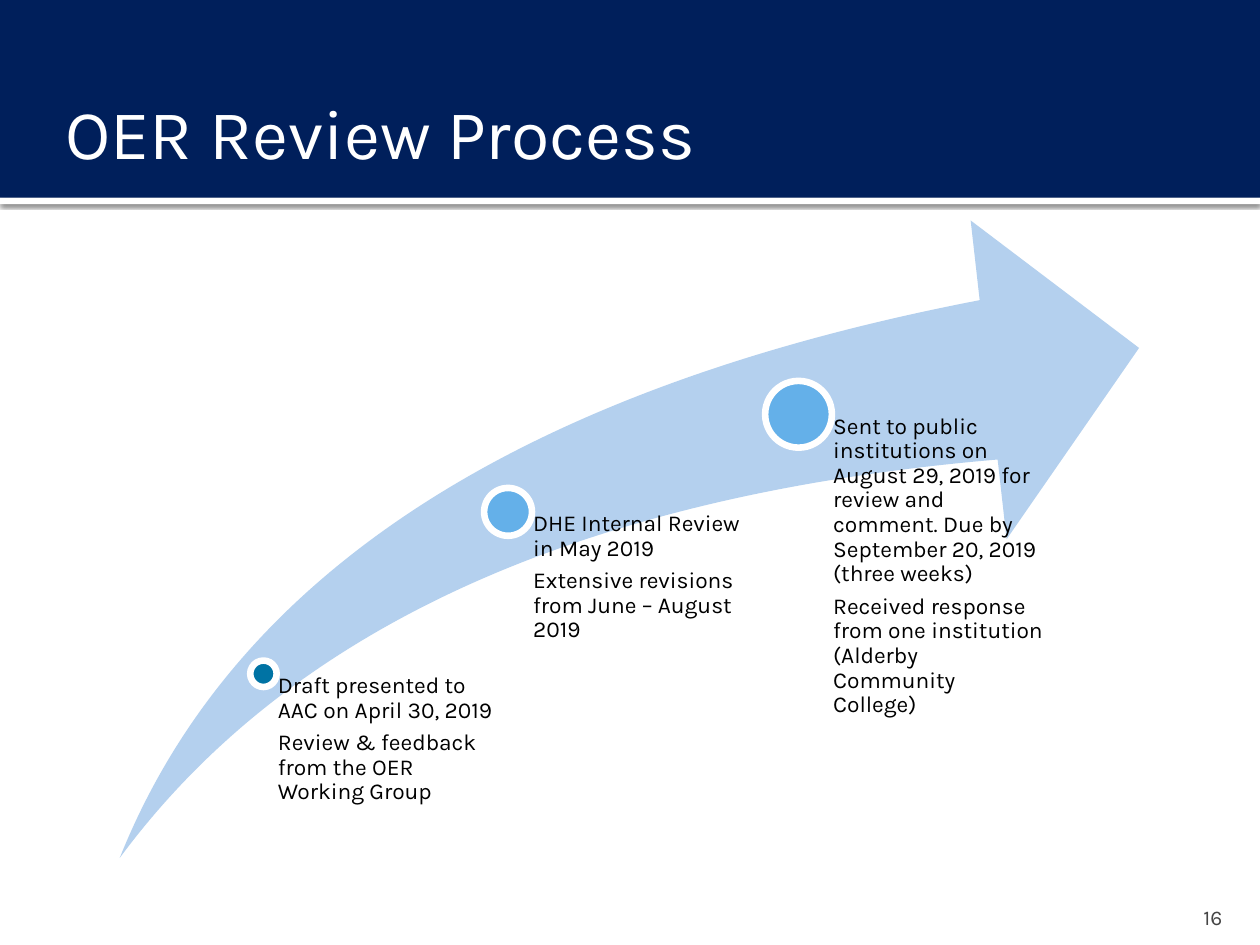
from lxml import etree
from pptx import Presentation
from pptx.dml.color import RGBColor
from pptx.enum.shapes import MSO_SHAPE
from pptx.enum.text import MSO_ANCHOR, MSO_AUTO_SIZE, PP_ALIGN
from pptx.oxml.ns import qn
from pptx.util import Inches, Pt

RECTANGLE, CIRCLE, SWOOSH = MSO_SHAPE.RECTANGLE, MSO_SHAPE.OVAL, MSO_SHAPE.SWOOSH_ARROW
TOP, MIDDLE, BOTTOM = MSO_ANCHOR.TOP, MSO_ANCHOR.MIDDLE, MSO_ANCHOR.BOTTOM
LEFT, RIGHT = PP_ALIGN.LEFT, PP_ALIGN.RIGHT
NO_AUTOFIT = MSO_AUTO_SIZE.NONE

WHITE = RGBColor(0xFF, 0xFF, 0xFF)
BLACK = RGBColor(0, 0, 0)
GRAY = RGBColor(0x45, 0x45, 0x45)
NAVY = RGBColor(0x00, 0x1F, 0x5B)
PALE_BLUE = RGBColor(0xB4, 0xD0, 0xEE)
TEAL = RGBColor(0x00, 0x73, 0xA4)
SKY = RGBColor(0x64, 0xB0, 0xE9)

FONT = "Karla"
SLIDE_W, SLIDE_H = 10, 7.5
HEADER_BOX = (0, 0, SLIDE_W, 1.57)
PROCESS_BOX = (0.95, 1.75, 8.09, 5.06)
NUMBER_BOX = (9, 7.08, 0.8, 0.3)

# Each milestone: centre as shares of the process box, diameter, text width, colour, notes
MILESTONES = [
    (0.141, 0.711, 0.21, 1.89, TEAL, [
        "Draft presented to AAC on April 30, 2019",
        "Review & feedback from the OER Working Group"]),
    (0.381, 0.457, 0.38, 1.94, SKY, [
        "DHE Internal Review in May 2019",
        "Extensive revisions from June – August 2019"]),
    (0.666, 0.304, 0.53, 1.94, SKY, [
        "Sent to public institutions on August 29, 2019 for review and comment. "
        "Due by September 20, 2019 (three weeks)",
        "Received response from one institution (Alderby Community College)"]),
]


def add_solid(shapes, kind, box, fill):
    """Add a filled preset shape with neither outline nor shadow."""
    solid = shapes.add_shape(kind, *map(Inches, box))
    solid.shadow.inherit = False
    solid.fill.solid()
    solid.fill.fore_color.rgb = fill
    solid.line.fill.background()
    return solid


def add_soft_shadow(shape):
    """Give a shape a small dark shadow just below it."""
    effects = shape.element.spPr.find(qn("a:effectLst"))
    shadow = etree.SubElement(effects, qn("a:outerShdw"), blurRad=str(Pt(2.5)),
                              dist=str(Pt(0.8)), dir="5400000", rotWithShape="0")
    color = etree.SubElement(shadow, qn("a:srgbClr"), val="000000")
    etree.SubElement(color, qn("a:alpha"), val="60000")


def write_text(frame, paragraphs, size, color, insets, anchor=TOP, align=LEFT):
    """Fill a text frame and format every paragraph alike."""
    frame.text = "\n".join(paragraphs)
    frame.word_wrap = True
    frame.auto_size = NO_AUTOFIT
    frame.vertical_anchor = anchor
    (frame.margin_left, frame.margin_top,
     frame.margin_right, frame.margin_bottom) = map(Inches, insets)
    for paragraph in frame.paragraphs:
        paragraph.alignment = align
        for run in paragraph.runs:
            run.font.name = FONT
            run.font.size = Pt(size)
            run.font.color.rgb = color


def add_header(slide, box, heading):
    """Draw the navy banner with its white rule and place the title on it."""
    left, top, width, height = box
    rule = add_solid(slide.shapes, RECTANGLE, (left, top + height, width, 0.05), WHITE)
    add_soft_shadow(rule)
    add_solid(slide.shapes, RECTANGLE, box, NAVY)
    title = slide.shapes.title
    title.left, title.top = Inches(left + 0.42), Inches(top + 0.58)
    title.width, title.height = Inches(width - 0.83), Inches(0.92)
    write_text(title.text_frame, [heading], 40, WHITE, (0.1, 0.05, 0.05, 0.05), MIDDLE)
    slide.shapes.element.append(title.element)


def add_milestone(shapes, center_x, center_y, diameter, width, bottom, color, notes):
    """Add a ringed dot with notes running down from its centre."""
    radius = diameter / 2
    dot = add_solid(shapes, CIRCLE,
                    (center_x - radius, center_y - radius, diameter, diameter), color)
    dot.line.color.rgb = WHITE
    dot.line.width = Pt(3.78)
    notes_box = (center_x, center_y, width, bottom - center_y)
    frame = shapes.add_textbox(*map(Inches, notes_box)).text_frame
    write_text(frame, notes, 13, BLACK, (radius + 0.01, 0, 0, 0))
    for paragraph in frame.paragraphs:
        paragraph.line_spacing = 0.9
        paragraph.space_after = Pt(4.55)


def add_process(slide, box, milestones):
    """Draw the rising arrow and its milestones as one group."""
    left, top, width, height = box
    shapes = slide.shapes.add_group_shape().shapes
    arrow = add_solid(shapes, SWOOSH, box, PALE_BLUE)
    arrow.adjustments[0] = arrow.adjustments[1] = 0.25
    for share_x, share_y, diameter, notes_width, color, notes in milestones:
        add_milestone(shapes, left + share_x * width, top + share_y * height,
                      diameter, notes_width, top + height, color, notes)


def add_page_number(slide, box, number):
    """Place the page number at the lower right."""
    frame = slide.shapes.add_textbox(*map(Inches, box)).text_frame
    write_text(frame, [number], 12, GRAY, (0.1, 0.05, 0.1, 0), BOTTOM, RIGHT)


def main():
    """Build the slide and save it."""
    deck = Presentation()
    deck.slide_width, deck.slide_height = Inches(SLIDE_W), Inches(SLIDE_H)
    slide = deck.slides.add_slide(deck.slide_layouts.get_by_name("Title Only"))
    add_header(slide, HEADER_BOX, "OER Review Process")
    add_process(slide, PROCESS_BOX, MILESTONES)
    add_page_number(slide, NUMBER_BOX, "16")
    deck.save("out.pptx")


if __name__ == "__main__":
    main()
